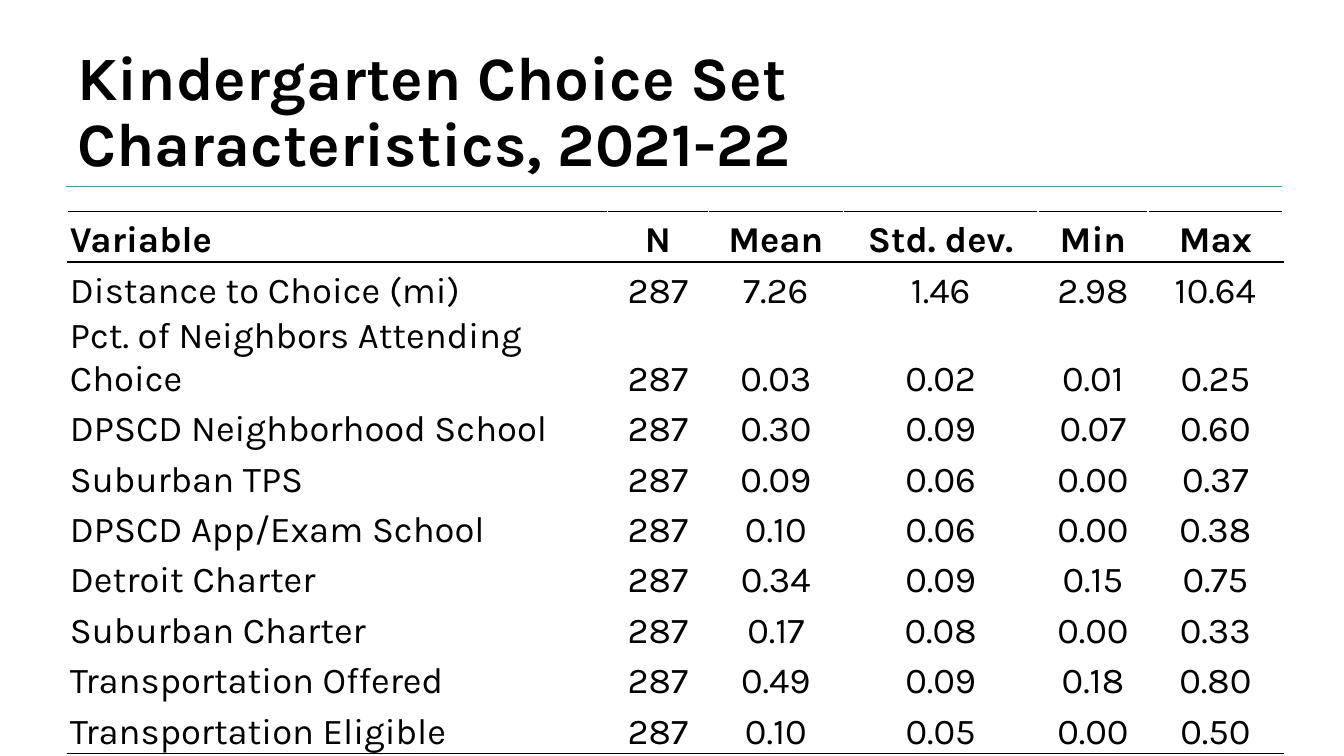
from dataclasses import dataclass

from lxml.etree import SubElement
from pptx import Presentation
from pptx.dml.color import RGBColor
from pptx.enum.shapes import MSO_CONNECTOR
from pptx.enum.text import MSO_ANCHOR, MSO_AUTO_SIZE, PP_ALIGN
from pptx.oxml import parse_xml
from pptx.oxml.ns import nsdecls, qn
from pptx.util import Pt


@dataclass(frozen=True)
class Theme:
    font: str = "Karla"
    ink: str = "000000"
    paper: str = "FFFFFF"
    accent: str = "00B7AA"
    title_size: int = 44
    table_size: int = 26


THEME = Theme()
LEFT = 48
COLUMN_WIDTHS = (386, 72, 96.5, 139, 78.5, 96.5)
ROW_HEIGHT = 36
HEADER = ("Variable", "N", "Mean", "Std. dev.", "Min", "Max")
SAMPLE = "287"
STATISTICS = (
    ("Distance to Choice (mi)", "7.26", "1.46", "2.98", "10.64"),
    ("Pct. of Neighbors Attending Choice", "0.03", "0.02", "0.01", "0.25"),
    ("DPSCD Neighborhood School", "0.30", "0.09", "0.07", "0.60"),
    ("Suburban TPS", "0.09", "0.06", "0.00", "0.37"),
    ("DPSCD App/Exam School", "0.10", "0.06", "0.00", "0.38"),
    ("Detroit Charter", "0.34", "0.09", "0.15", "0.75"),
    ("Suburban Charter", "0.17", "0.08", "0.00", "0.33"),
    ("Transportation Offered", "0.49", "0.09", "0.18", "0.80"),
    ("Transportation Eligible", "0.10", "0.05", "0.00", "0.50"),
)


def style_paragraph(paragraph, size, bold, align):
    paragraph.alignment = align
    font = paragraph.font
    font.name = THEME.font
    font.size = Pt(size)
    font.bold = bold
    font.color.rgb = RGBColor.from_string(THEME.ink)


def set_title(slide, wording):
    title = slide.shapes.title
    title.left, title.top = Pt(LEFT), Pt(28.8)
    title.width, title.height = Pt(561.6), Pt(104.4)
    frame = title.text_frame
    frame.text = wording
    frame.word_wrap = True
    frame.auto_size = MSO_AUTO_SIZE.NONE
    frame.vertical_anchor = MSO_ANCHOR.MIDDLE
    heading = frame.paragraphs[0]
    heading.line_spacing = 0.9
    style_paragraph(heading, THEME.title_size, True, PP_ALIGN.LEFT)


def add_rule(slide, start, end, y):
    rule = slide.shapes.add_connector(
        MSO_CONNECTOR.STRAIGHT, Pt(start), Pt(y), Pt(end), Pt(y)
    )
    rule.line.color.rgb = RGBColor.from_string(THEME.accent)
    rule.line.width = Pt(0.5)
    SubElement(rule.element.spPr, qn("a:effectLst"))


def set_borders(cell, top, bottom):
    properties = cell._tc.get_or_add_tcPr()
    sides = (("L", THEME.paper), ("R", THEME.paper), ("T", top), ("B", bottom))
    for position, (side, color) in enumerate(sides):
        border = parse_xml(
            f'<a:ln{side} {nsdecls("a")} w="{Pt(1)}"><a:solidFill>'
            f'<a:srgbClr val="{color}"/></a:solidFill></a:ln{side}>'
        )
        properties.insert(position, border)


def fill_cell(cell, wording, bold, align):
    cell.text = wording
    cell.fill.background()
    cell.vertical_anchor = MSO_ANCHOR.BOTTOM
    cell.margin_left = cell.margin_right = cell.margin_top = Pt(2)
    cell.margin_bottom = 0
    style_paragraph(cell.text_frame.paragraphs[0], THEME.table_size, bold, align)


def add_statistics(slide, top):
    records = [HEADER] + [(name, SAMPLE, *values) for name, *values in STATISTICS]
    last = len(records) - 1
    table = slide.shapes.add_table(
        len(records), len(HEADER), Pt(LEFT), Pt(top),
        Pt(sum(COLUMN_WIDTHS)), Pt(ROW_HEIGHT * len(records)),
    ).table
    table.horz_banding = False
    for column, width in zip(table.columns, COLUMN_WIDTHS):
        column.width = Pt(width)
    for index, record in enumerate(records):
        table.rows[index].height = Pt(ROW_HEIGHT)
        top_color = THEME.ink if index in (0, 1) else THEME.paper
        bottom_color = THEME.ink if index in (0, last) else THEME.paper
        for position, wording in enumerate(record):
            cell = table.cell(index, position)
            align = PP_ALIGN.CENTER if position else PP_ALIGN.LEFT
            fill_cell(cell, wording, index == 0, align)
            set_borders(cell, top_color, bottom_color)


def main():
    deck = Presentation()
    deck.slide_width, deck.slide_height = Pt(960), Pt(540)
    slide = deck.slides.add_slide(deck.slide_layouts[5])
    add_rule(slide, 47.5, 916, 133.2)
    set_title(slide, "Kindergarten Choice Set Characteristics, 2021-22")
    add_statistics(slide, 151.2)
    deck.save("out.pptx")


if __name__ == "__main__":
    main()
